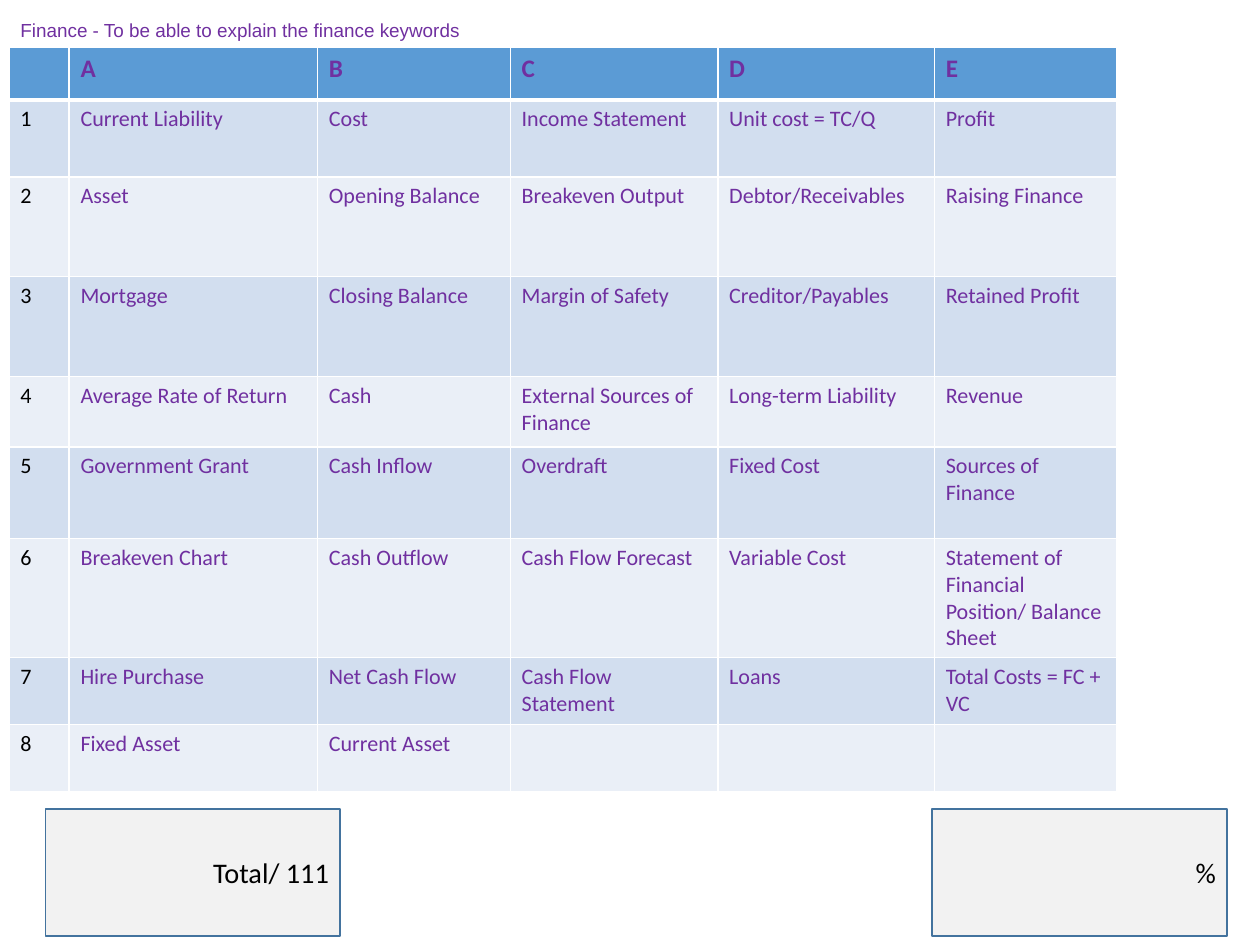
"""Build a slide with a grid of finance keywords and two score boxes."""
from lxml import etree
from pptx import Presentation
from pptx.dml.color import RGBColor
from pptx.enum.shapes import MSO_SHAPE
from pptx.enum.text import MSO_ANCHOR, MSO_AUTO_SIZE, PP_ALIGN
from pptx.oxml.ns import qn
from pptx.util import Pt

RECT = MSO_SHAPE.RECTANGLE
TOP, MIDDLE = MSO_ANCHOR.TOP, MSO_ANCHOR.MIDDLE
LEFT, RIGHT = PP_ALIGN.LEFT, PP_ALIGN.RIGHT
FIXED = MSO_AUTO_SIZE.NONE
PX = 9144

COLORS = {
    "purple": "7030A0", "black": "000000", "white": "FFFFFF",
    "head": "5B9BD5", "odd": "D2DEEF", "even": "EAEFF7",
    "box": "F2F2F2", "edge": "43739E",
}
WIDTHS = [53, 219, 170, 183, 191, 161]
HEIGHTS = [46, 68, 88, 88, 62, 81, 90, 59, 59]
WORDS = [
    ["", "A", "B", "C", "D", "E"],
    ["1", "Current Liability", "Cost", "Income Statement",
     "Unit cost = TC/Q", "Profit"],
    ["2", "Asset", "Opening Balance", "Breakeven Output",
     "Debtor/Receivables", "Raising Finance"],
    ["3", "Mortgage", "Closing Balance", "Margin of Safety",
     "Creditor/Payables", "Retained Profit"],
    ["4", "Average Rate of Return", "Cash", "External Sources of Finance",
     "Long-term Liability", "Revenue"],
    ["5", "Government Grant", "Cash Inflow", "Overdraft",
     "Fixed Cost", "Sources of Finance"],
    ["6", "Breakeven Chart", "Cash Outflow", "Cash Flow Forecast",
     "Variable Cost", "Statement of Financial Position/ Balance Sheet"],
    ["7", "Hire Purchase", "Net Cash Flow", "Cash Flow Statement",
     "Loans", "Total Costs = FC + VC"],
    ["8", "Fixed Asset", "Current Asset", "", "", ""],
]


def write(frame, text, size=14, color="purple", bold=False,
          font="Calibri", align=LEFT, anchor=TOP):
    frame.word_wrap = True
    frame.vertical_anchor = anchor
    para = frame.paragraphs[0]
    para.alignment = align
    run = para.add_run()
    run.text = text
    run.font.size = Pt(size)
    run.font.name = font
    run.font.bold = bold
    run.font.color.rgb = RGBColor.from_string(COLORS[color])


def border(cell, sides):
    props = cell._tc.get_or_add_tcPr()
    for index, (side, width) in enumerate(sides.items()):
        line = etree.Element(qn("a:ln" + side), w=str(Pt(width)))
        fill = etree.SubElement(line, qn("a:solidFill"))
        etree.SubElement(fill, qn("a:srgbClr"), val=COLORS["white"])
        props.insert(index, line)


deck = Presentation()
deck.slide_width, deck.slide_height = 1111 * PX, 833 * PX
slide = deck.slides.add_slide(deck.slide_layouts[5])

title = slide.shapes.title
title.left, title.top, title.width, title.height = 8 * PX, 11 * PX, 900 * PX, 30 * PX
title.text_frame.auto_size = FIXED
write(title.text_frame, "Finance - To be able to explain the finance keywords",
      size=12, font="Arial")

table = slide.shapes.add_table(
    len(HEIGHTS), len(WIDTHS), 8 * PX, 42 * PX,
    sum(WIDTHS) * PX, sum(HEIGHTS) * PX).table
for column, width in zip(table.columns, WIDTHS):
    column.width = width * PX
for row, height in zip(table.rows, HEIGHTS):
    row.height = height * PX

for r, words in enumerate(WORDS):
    shade = "head" if r == 0 else "odd" if r % 2 else "even"
    for c, word in enumerate(words):
        cell = table.cell(r, c)
        cell.fill.solid()
        cell.fill.fore_color.rgb = RGBColor.from_string(COLORS[shade])
        border(cell, {"L": 1, "R": 1, "T": 3 if r == 1 else 1, "B": 3 if r == 0 else 1})
        if word:
            write(cell.text_frame, word, size=14 if r else 16,
                  color="purple" if c else "black", bold=r == 0)

for left, label in [(822, "%"), (40, "Total/ 111")]:
    box = slide.shapes.add_shape(RECT, left * PX, 713 * PX, 260 * PX, 112 * PX)
    box.shadow.inherit = False
    box.fill.solid()
    box.fill.fore_color.rgb = RGBColor.from_string(COLORS["box"])
    box.line.color.rgb = RGBColor.from_string(COLORS["edge"])
    box.line.width = Pt(1)
    write(box.text_frame, label, size=18, color="black", align=RIGHT, anchor=MIDDLE)

deck.save("out.pptx")
